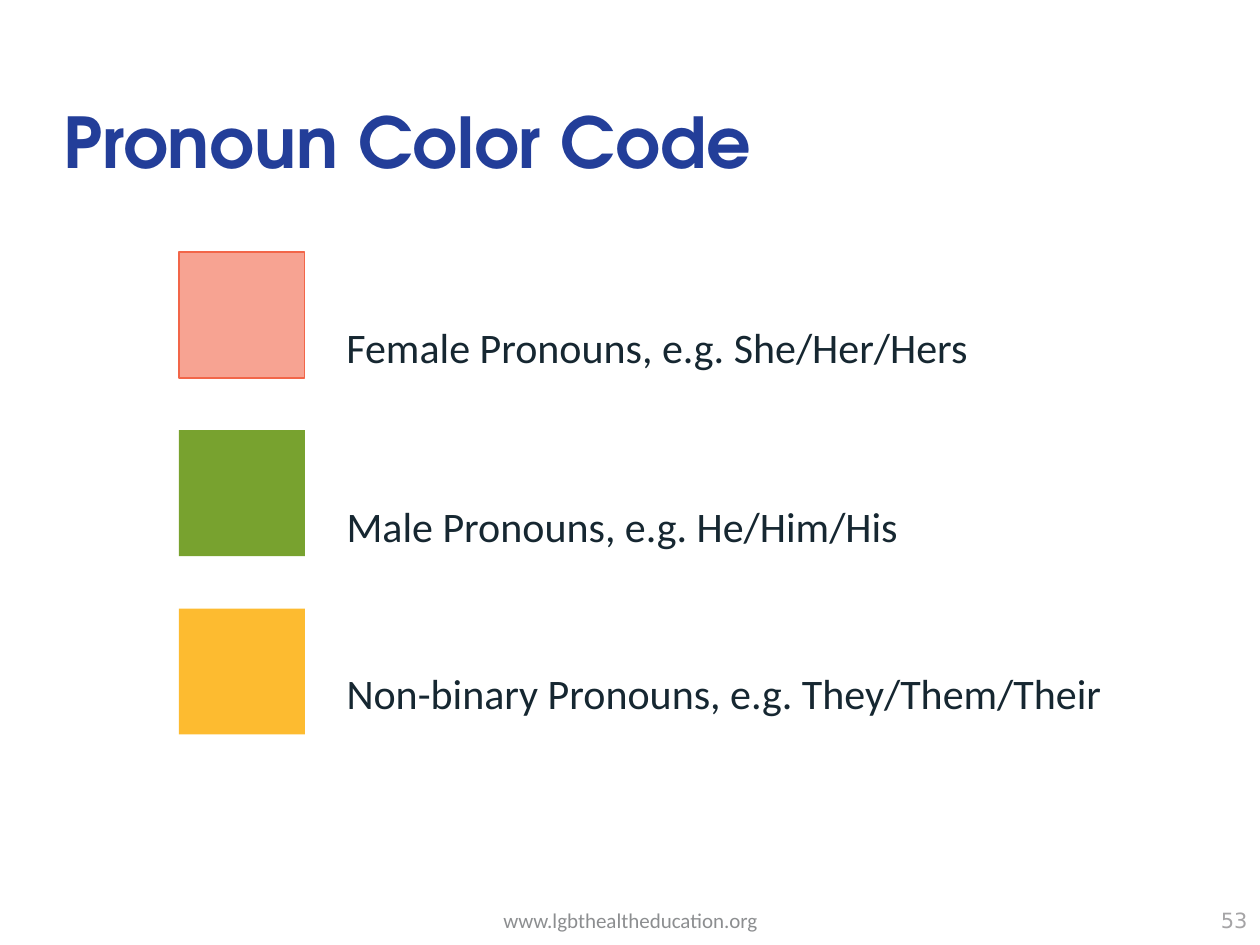
from typing import NamedTuple

from pptx import Presentation
from pptx.dml.color import RGBColor
from pptx.enum.shapes import MSO_SHAPE
from pptx.enum.text import MSO_ANCHOR, MSO_AUTO_SIZE, PP_ALIGN
from pptx.util import Inches, Pt

COLORS = {
    "title": "233E99",
    "text": "162731",
    "footer": "8C8E90",
    "number": "A5A4A6",
    "female": "F7A392",
    "female_line": "F26649",
    "male": "78A22F",
    "nonbinary": "FDBB30",
}
SWATCH_LEFT, SWATCH_TOP, SWATCH_SIZE, SWATCH_PITCH = 1.42, 2, 1, 1.415
LABEL_LEFT, LABEL_HEIGHT = 2.75, 0.5


class Pronoun(NamedTuple):
    label: str
    fill: str
    label_top: float
    label_width: float
    line: str | None = None


PRONOUNS = [
    Pronoun("Female Pronouns, e.g. She/Her/Hers", "female", 2.5, 5.06, "female_line"),
    Pronoun("Male Pronouns, e.g. He/Him/His", "male", 3.92, 4.42),
    Pronoun("Non-binary Pronouns, e.g. They/Them/Their", "nonbinary", 5.25, 6.75),
]


def rgb(name: str) -> RGBColor:
    return RGBColor.from_string(COLORS[name])


def set_font(p, name: str, size: float, color: str, bold: bool = False) -> None:
    p.font.name = name
    p.font.size = Pt(size)
    p.font.bold = bold
    p.font.color.rgb = rgb(color)


def add_title(s, text: str) -> None:
    title = s.shapes.title
    title.left, title.top = Inches(0.5), Inches(0.25)
    title.width, title.height = Inches(9), Inches(1.25)
    tf = title.text_frame
    tf.text = text
    tf.auto_size = MSO_AUTO_SIZE.NONE
    tf.vertical_anchor = MSO_ANCHOR.BOTTOM
    tf.margin_left = tf.margin_right = 0
    p = tf.paragraphs[0]
    p.alignment = PP_ALIGN.LEFT
    p.line_spacing = Pt(35)
    p.space_after = Pt(6)
    set_font(p, "TeX Gyre Adventor", 40, "title", bold=True)


def add_text(s, text: str, left: float, top: float, width: float, height: float,
             font: str, size: float, color: str, align=PP_ALIGN.LEFT,
             anchor=MSO_ANCHOR.TOP, margin: float = 0.1) -> None:
    tf = s.shapes.add_textbox(
        Inches(left), Inches(top), Inches(width), Inches(height)).text_frame
    tf.word_wrap = True
    tf.vertical_anchor = anchor
    tf.margin_left = tf.margin_right = Inches(margin)
    p = tf.paragraphs[0]
    p.text = text
    p.alignment = align
    set_font(p, font, size, color)


def add_pronoun(s, index: int, pronoun: Pronoun) -> None:
    """Draw one colour swatch and its label."""
    swatch = s.shapes.add_shape(
        MSO_SHAPE.RECTANGLE, Inches(SWATCH_LEFT),
        Inches(SWATCH_TOP + index * SWATCH_PITCH),
        Inches(SWATCH_SIZE), Inches(SWATCH_SIZE))
    swatch.shadow.inherit = False
    swatch.fill.solid()
    swatch.fill.fore_color.rgb = rgb(pronoun.fill)
    if pronoun.line:
        swatch.line.color.rgb = rgb(pronoun.line)
        swatch.line.width = Pt(0.75)
    else:
        swatch.line.fill.background()
    add_text(s, pronoun.label, LABEL_LEFT, pronoun.label_top, pronoun.label_width,
             LABEL_HEIGHT, "Calibri", 24, "text", margin=0)


def main() -> None:
    prs = Presentation()
    prs.slide_width, prs.slide_height = Inches(10), Inches(7.5)
    s = prs.slides.add_slide(prs.slide_layouts[5])
    add_title(s, "Pronoun Color Code")
    add_text(s, "53", 7.67, 7.1, 2.33, 0.4, "DejaVu Sans", 12, "number",
             PP_ALIGN.RIGHT, MSO_ANCHOR.MIDDLE)
    add_text(s, "www.lgbthealtheducation.org", 3.42, 7.1, 3.17, 0.4, "Calibri", 12,
             "footer", PP_ALIGN.CENTER, MSO_ANCHOR.MIDDLE)
    for i, pronoun in enumerate(PRONOUNS):
        add_pronoun(s, i, pronoun)
    prs.save("out.pptx")


if __name__ == "__main__":
    main()
